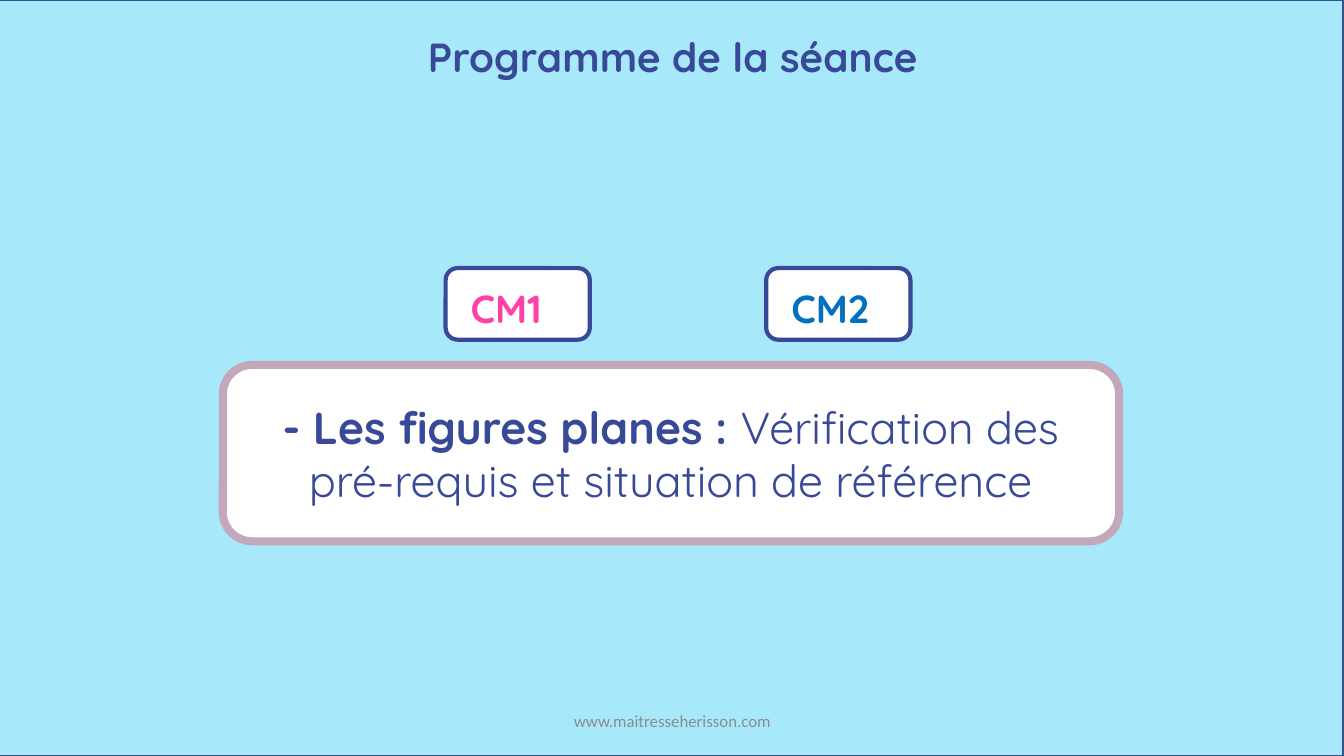
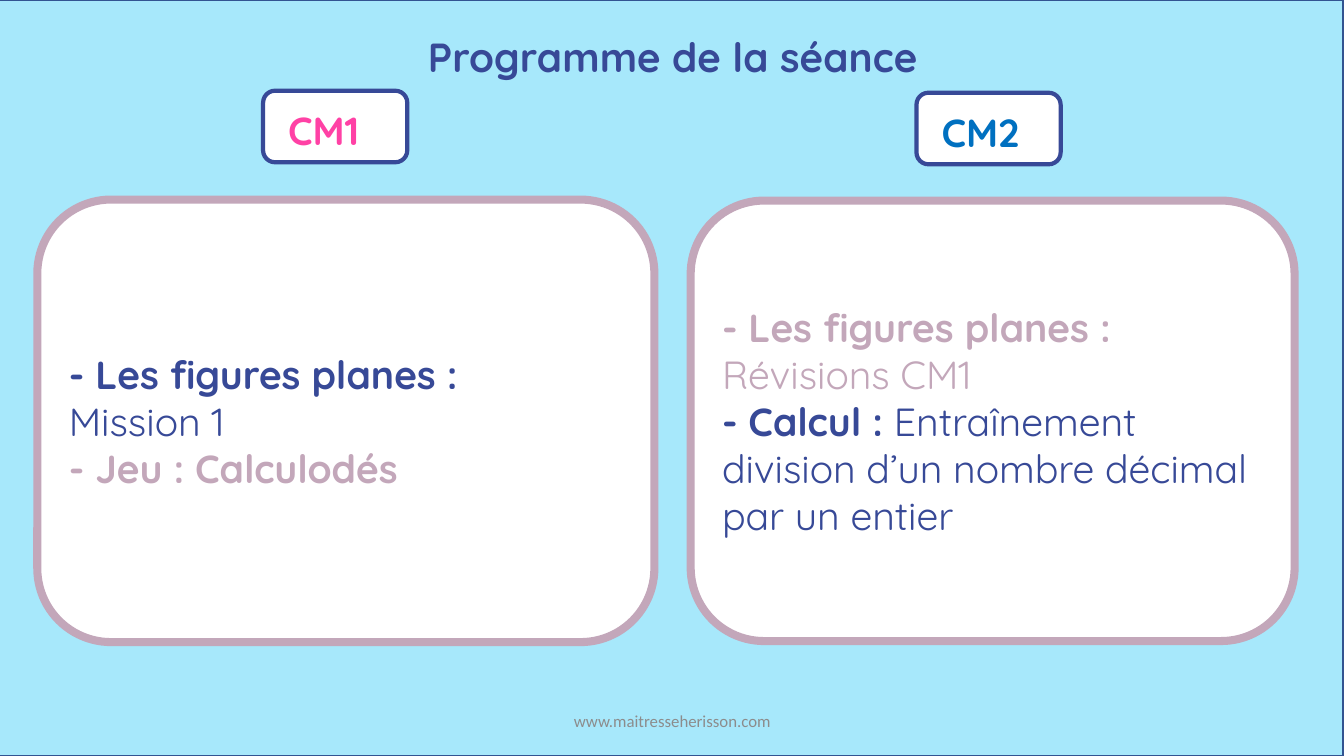
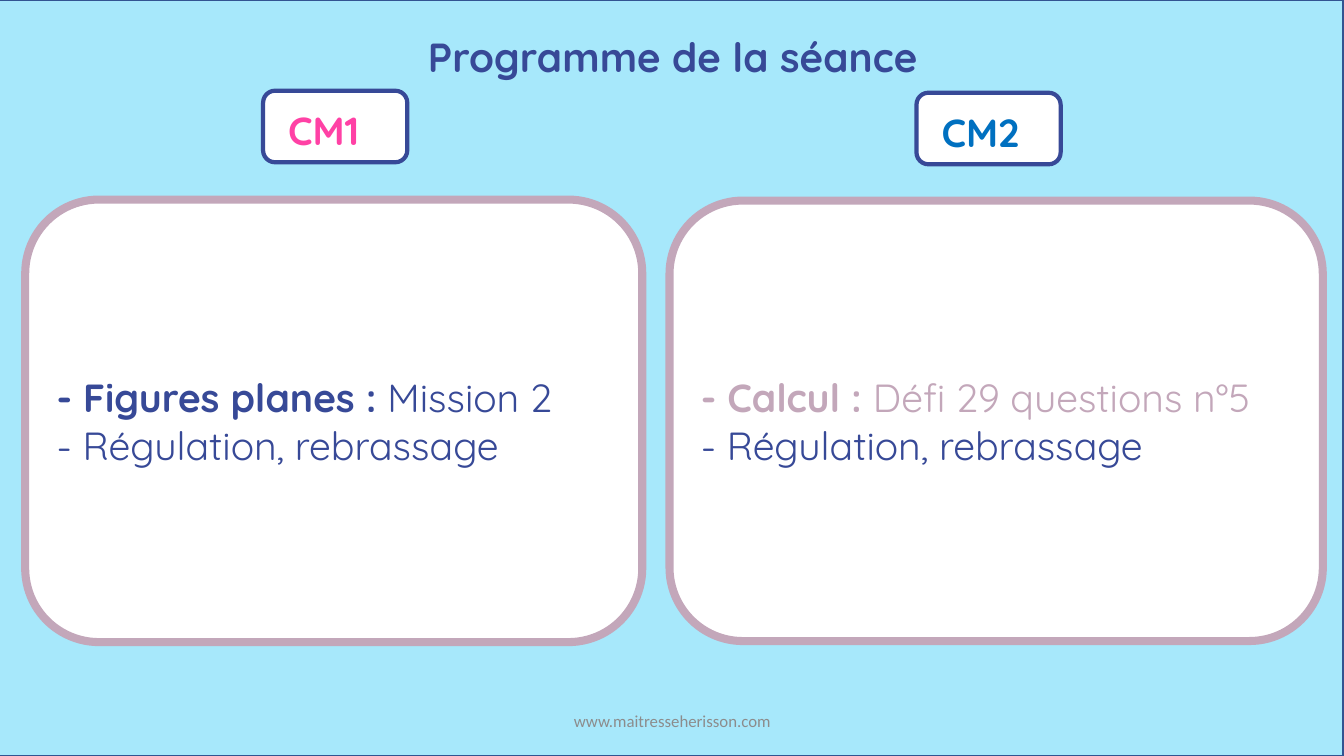
from dataclasses import dataclass

from pptx import Presentation
from pptx.dml.color import RGBColor
from pptx.enum.shapes import MSO_SHAPE as Shape
from pptx.enum.text import MSO_ANCHOR as Anchor, PP_ALIGN as Align
from pptx.util import Inches, Pt


@dataclass(frozen=True)
class Theme:
    sky: str = "A7E8FB"
    frame: str = "325491"
    white: str = "FFFFFF"
    navy: str = "374997"
    mauve: str = "C3A7BA"
    pink: str = "FF41A5"
    blue: str = "0070C0"
    grey: str = "8C8C8C"
    font: str = "Quicksand"
    footer_font: str = "Calibri"
    title_size: float = 29
    lead_size: float = 32
    body_size: float = 28
    footer_size: float = 12
    frame_line: float = 1
    badge_line: float = 3
    panel_line: float = 5.75


theme = Theme()


def add_box(shapes, kind, place, fill, line, line_width):
    shape = shapes.add_shape(kind, *map(Inches, place))
    shape.shadow.inherit = False
    shape.fill.solid()
    shape.fill.fore_color.rgb = RGBColor.from_string(fill)
    shape.line.color.rgb = RGBColor.from_string(line)
    shape.line.width = Pt(line_width)
    return shape


def write(shape, paragraphs, size, align=Align.LEFT, anchor=Anchor.TOP, font=theme.font):
    """Each paragraph is a list of (text, colour, bold) runs."""
    text_frame = shape.text_frame
    text_frame.word_wrap = True
    text_frame.vertical_anchor = anchor
    for index, runs in enumerate(paragraphs):
        paragraph = text_frame.add_paragraph() if index else text_frame.paragraphs[0]
        paragraph.alignment = align
        for text, colour, bold in runs:
            run = paragraph.add_run()
            run.text = text
            run.font.name = font
            run.font.size = Pt(size)
            run.font.bold = bold
            run.font.color.rgb = RGBColor.from_string(colour)


# Content: badge corners, then panels as (place, size, alignment, paragraphs)
column_badges = [(2.61, 0.9), (9.09, 0.92)]
programme = [
    {
        "badges": [(4.42, 2.66), (7.6, 2.66)],
        "panels": [
            ((2.21, 3.62, 8.89, 1.75), theme.lead_size, Align.CENTER, [
                [("- Les figures planes : ", theme.navy, True),
                 ("Vérification des pré-requis et situation de référence", theme.navy, False)],
            ]),
        ],
    },
    {
        "badges": column_badges,
        "panels": [
            ((0.37, 1.98, 6.12, 4.39), theme.body_size, Align.LEFT, [
                [("- Les figures planes :", theme.navy, True)],
                [("Mission 1", theme.navy, False)],
                [("- Jeu : Calculodés", theme.mauve, True)],
            ]),
            ((6.85, 1.99, 5.99, 4.37), theme.body_size, Align.LEFT, [
                [("- Les figures planes : ", theme.mauve, True),
                 ("Révisions CM1", theme.mauve, False)],
                [("- Calcul : ", theme.navy, True),
                 ("Entraînement division d’un nombre décimal par un entier", theme.navy, False)],
            ]),
        ],
    },
    {
        "badges": column_badges,
        "panels": [
            ((0.25, 1.98, 6.12, 4.39), theme.body_size, Align.LEFT, [
                [("- Figures planes : ", theme.navy, True),
                 ("Mission 2", theme.navy, False)],
                [("- Régulation, rebrassage", theme.navy, False)],
            ]),
            ((6.64, 1.99, 6.48, 4.37), theme.body_size, Align.LEFT, [
                [("- Calcul : ", theme.mauve, True),
                 ("Défi 29 questions n°5", theme.mauve, False)],
                [("- Régulation, rebrassage", theme.navy, False)],
            ]),
        ],
    },
]
levels = [("CM1", theme.pink), ("CM2", theme.blue)]

presentation = Presentation()
presentation.slide_width = Inches(13.33)
presentation.slide_height = Inches(7.5)

for session in programme:
    slide = presentation.slides.add_slide(presentation.slide_layouts[6])

    # Framed background
    add_box(slide.shapes, Shape.RECTANGLE, (-0.01, 0, 13.33, 7.5),
            theme.sky, theme.frame, theme.frame_line)

    # Title and footer
    title = slide.shapes.add_textbox(*map(Inches, (0.01, 0.27, 13.33, 0.59)))
    write(title, [[("Programme de la séance", theme.navy, True)]],
          theme.title_size, Align.CENTER)
    footer = slide.shapes.add_textbox(*map(Inches, (4.42, 6.95, 4.5, 0.4)))
    write(footer, [[("www.maitresseherisson.com", theme.grey, False)]],
          theme.footer_size, Align.CENTER, Anchor.MIDDLE, theme.footer_font)

    # Level badges
    for (left, top), (level, colour) in zip(session["badges"], levels):
        badge = slide.shapes.add_group_shape()
        add_box(badge.shapes, Shape.ROUNDED_RECTANGLE, (left, top, 1.43, 0.71),
                theme.white, theme.navy, theme.badge_line)
        label = badge.shapes.add_textbox(
            *map(Inches, (left + 0.15, top + 0.11, 1.1, 0.57)))
        write(label, [[(level, colour, True)]], theme.body_size)

    # Activity panels
    for place, size, align, paragraphs in session["panels"]:
        panel = add_box(slide.shapes, Shape.ROUNDED_RECTANGLE, place,
                        theme.white, theme.mauve, theme.panel_line)
        write(panel, paragraphs, size, align, Anchor.MIDDLE)

presentation.save("out.pptx")
